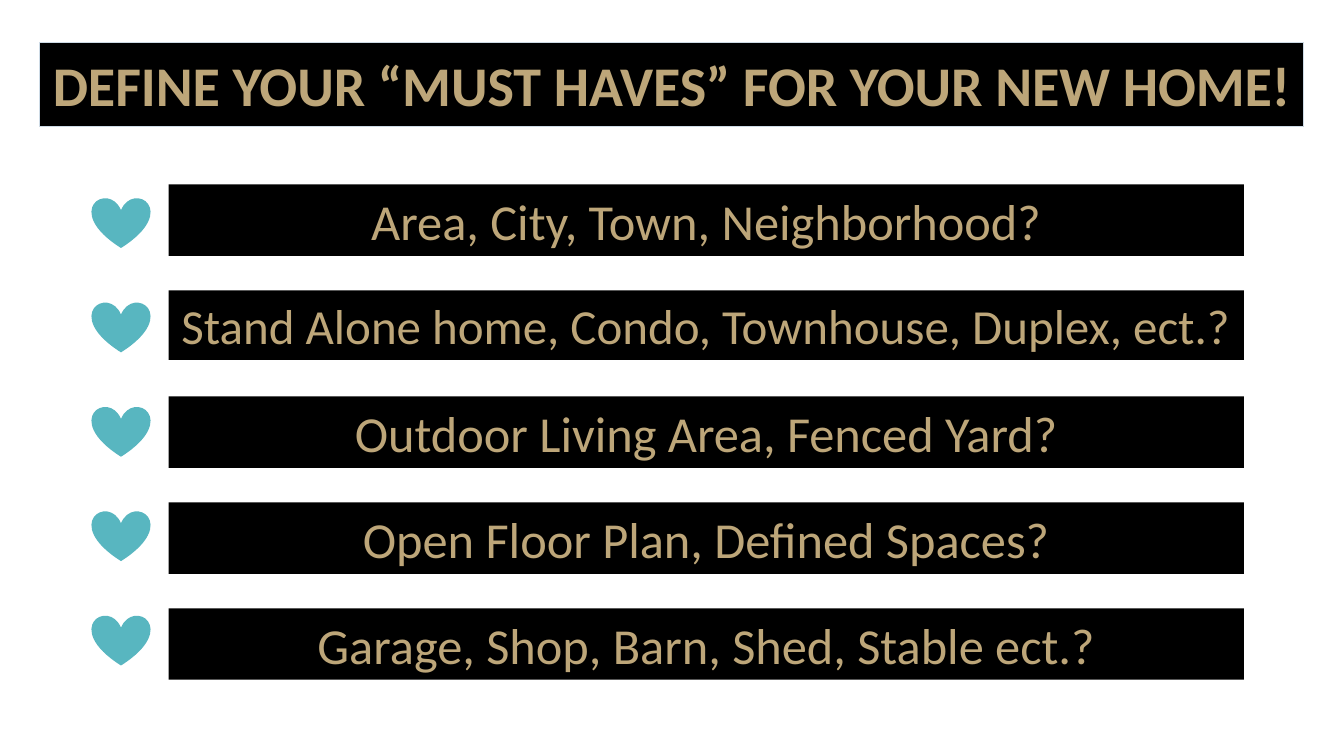
from pptx import Presentation
from pptx.dml.color import RGBColor
from pptx.enum.shapes import MSO_SHAPE
from pptx.enum.text import MSO_ANCHOR, MSO_AUTO_SIZE, PP_ALIGN
from pptx.util import Cm, Pt

BLACK = RGBColor(0x00, 0x00, 0x00)
GOLD = RGBColor(0xBD, 0xA6, 0x79)
TEAL = RGBColor(0x58, 0xB6, 0xC0)
PALE_BLUE = RGBColor(0xCE, 0xDB, 0xE6)
FONT = "Calibri"

MUST_HAVES = [
    ("Area, City, Town, Neighborhood?", 36, 1.8),
    ("Stand Alone home, Condo, Townhouse, Duplex, ect.?", 35, 1.75),
    ("Outdoor Living Area, Fenced Yard?", 36, 1.8),
    ("Open Floor Plan, Defined Spaces?", 36, 1.8),
    ("Garage, Shop, Barn, Shed, Stable ect.?", 36, 1.8),
]
BAR_TOP, BAR_PITCH = 4.65, 2.67
HEART_TOP, HEART_PITCH = 4.98, 2.63


class MustHavesSlide:
    def __init__(self, presentation):
        self.slide = presentation.slides.add_slide(presentation.slide_layouts[5])

    def set_text(self, shape, text, size, bold=False):
        text_frame = shape.text_frame
        text_frame.text = text
        text_frame.word_wrap = True
        text_frame.auto_size = MSO_AUTO_SIZE.SHAPE_TO_FIT_TEXT
        text_frame.vertical_anchor = MSO_ANCHOR.MIDDLE
        paragraph = text_frame.paragraphs[0]
        paragraph.alignment = PP_ALIGN.CENTER
        font = paragraph.runs[0].font
        font.name = FONT
        font.size = Pt(size)
        font.bold = bold
        font.color.rgb = GOLD

    def add_filled(self, kind, left, top, width, height, color):
        shape = self.slide.shapes.add_shape(kind, Cm(left), Cm(top), Cm(width), Cm(height))
        shape.shadow.inherit = False
        shape.fill.solid()
        shape.fill.fore_color.rgb = color
        shape.line.fill.background()
        return shape

    def add_title(self, text):
        title = self.slide.shapes.title
        title.left, title.top = Cm(1), Cm(1.15)
        title.width, title.height = Cm(31.86), Cm(1.96)
        title.fill.solid()
        title.fill.fore_color.rgb = BLACK
        title.line.color.rgb = PALE_BLUE
        title.line.width = Pt(0.75)
        self.set_text(title, text, 40, bold=True)

    def add_heart(self, top):
        self.add_filled(MSO_SHAPE.HEART, 2.31, top, 1.48, 1.27, TEAL)

    def add_bar(self, text, size, top, height):
        bar = self.add_filled(MSO_SHAPE.RECTANGLE, 4.25, top, 27.1, height, BLACK)
        self.set_text(bar, text, size)


def main():
    presentation = Presentation()
    presentation.slide_width = Cm(33.87)
    presentation.slide_height = Cm(19.05)
    must_haves_slide = MustHavesSlide(presentation)
    must_haves_slide.add_title("DEFINE YOUR “MUST HAVES” FOR YOUR NEW HOME!")
    for index, (text, size, height) in enumerate(MUST_HAVES):
        must_haves_slide.add_heart(HEART_TOP + index * HEART_PITCH)
        must_haves_slide.add_bar(text, size, BAR_TOP + index * BAR_PITCH, height)
    presentation.save("out.pptx")


if __name__ == "__main__":
    main()
